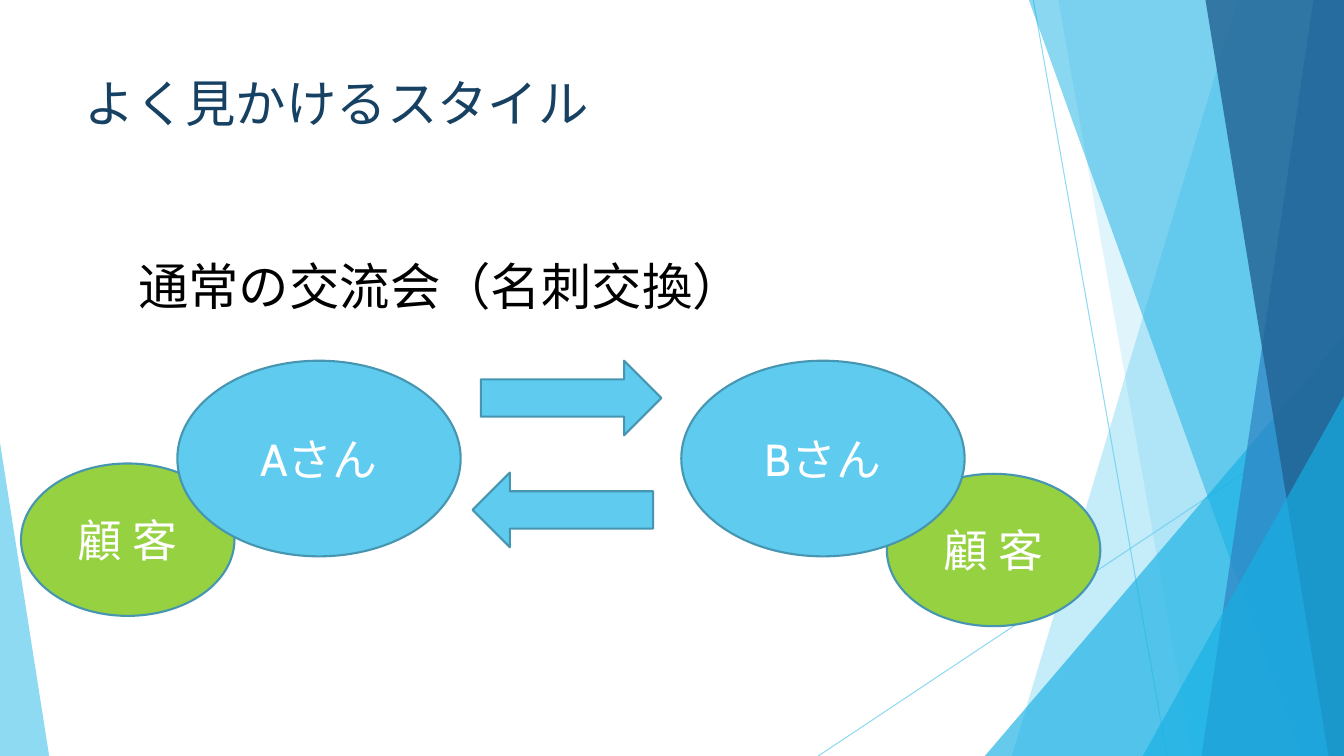
from collections import namedtuple
from dataclasses import dataclass

from lxml.etree import SubElement
from pptx import Presentation
from pptx.dml.color import RGBColor
from pptx.enum.shapes import MSO_CONNECTOR, MSO_SHAPE
from pptx.enum.text import MSO_ANCHOR, MSO_AUTO_SIZE, PP_ALIGN
from pptx.oxml.ns import qn
from pptx.util import Cm, Pt

Box = namedtuple("Box", "left top width height")


@dataclass(frozen=True)
class Theme:
    font: str = "Cabin"
    heading_size: int = 36
    label_size: int = 32
    title: str = "174162"
    text: str = "000000"
    white: str = "FFFFFF"
    sky: str = "5FCBEF"
    cyan: str = "17B0E4"
    blue: str = "2E83C3"
    navy: str = "226292"
    green: str = "96D141"
    outline: str = "4696B1"


THEME = Theme()
PAGE = Box(0, 0, 33.87, 19.05)


def lengths(box):
    return [Cm(value) for value in box]


def inside(box, left, top, width, height):
    return Box(box.left + left, box.top + top, width, height)


def paint(format_, color, opacity=100):
    """Give a fill or line format a solid colour with an opacity in percent."""
    fill = getattr(format_, "fill", format_)
    fill.solid()
    fill.fore_color.rgb = RGBColor.from_string(color)
    if opacity < 100:
        color_node = next(fill._xPr.iter(qn("a:srgbClr")))
        SubElement(color_node, qn("a:alpha")).set("val", str(opacity * 1000))


def write(shape, text, size, color, align=PP_ALIGN.LEFT):
    para = shape.text_frame.paragraphs[0]
    para.text = text
    para.alignment = align
    para.font.name = THEME.font
    para.font.size = Pt(size)
    para.font.color.rgb = RGBColor.from_string(color)


def add_hairline(page, start, end):
    line = page.shapes.add_connector(
        MSO_CONNECTOR.STRAIGHT, *lengths(start), *lengths(end))
    line.line.width = Pt(0.75)
    paint(line.line, THEME.sky, 70)
    SubElement(line._element.spPr, qn("a:effectLst"))


def add_band(page, box, top_x, bottom_x, color, opacity):
    """Fill from a slanted left edge to the right edge of the box."""
    right, bottom = box.left + box.width, box.top + box.height
    corners = [(right, box.top), (right, bottom), (box.left + bottom_x, bottom)]
    builder = page.shapes.build_freeform(Cm(box.left + top_x), Cm(box.top))
    builder.add_line_segments([lengths(corner) for corner in corners], close=True)
    band = builder.convert_to_shape()
    band.shadow.inherit = False
    paint(band.fill, color, opacity)
    band.line.fill.background()


def add_corner(page, box, width, height, apex, color, opacity):
    """Place a right triangle in a bottom corner: apex 0 is left, 1 is right."""
    place = inside(box, apex * (box.width - width), box.height - height, width, height)
    corner = page.shapes.add_shape(MSO_SHAPE.ISOSCELES_TRIANGLE, *lengths(place))
    corner.adjustments[0] = apex
    corner.shadow.inherit = False
    paint(corner.fill, color, opacity)
    corner.line.fill.background()


def add_backdrop(page, box):
    add_hairline(page, (box.left + 26.04, box.top), (box.left + 29.41, box.top + box.height))
    add_hairline(page, (box.left + box.width, box.top + 10.24),
                 (box.left + 20.62, box.top + box.height))
    add_band(page, box, 31.19, 25.5, THEME.sky, 36)
    add_band(page, box, 26.67, 30.05, THEME.sky, 20)
    add_corner(page, box, 9.05, 10.59, 1, THEME.cyan, 66)
    add_band(page, box, 25.93, 32.79, THEME.cyan, 50)
    add_band(page, box, 33.1, 30.28, THEME.blue, 70)
    add_band(page, box, 30.38, 33.48, THEME.navy, 80)
    add_corner(page, box, 5.07, 9.07, 1, THEME.cyan, 66)
    add_corner(page, box, 1.24, 7.9, 0, THEME.sky, 70)


def add_title(page, box, text):
    title = page.shapes.title
    title.left, title.top, title.width, title.height = lengths(box)
    title.text_frame.auto_size = MSO_AUTO_SIZE.NONE
    title.text_frame.vertical_anchor = MSO_ANCHOR.TOP
    write(title, text, THEME.heading_size, THEME.title)


def add_caption(page, box, text):
    caption = page.shapes.add_textbox(*lengths(box))
    caption.text_frame.word_wrap = False
    caption.text_frame.auto_size = MSO_AUTO_SIZE.SHAPE_TO_FIT_TEXT
    write(caption, text, THEME.heading_size, THEME.text)


def add_outlined(page, kind, box, color, text=""):
    shape = page.shapes.add_shape(kind, *lengths(box))
    shape.shadow.inherit = False
    paint(shape.fill, color)
    paint(shape.line, THEME.outline)
    shape.line.width = Pt(1.5)
    if text:
        shape.text_frame.vertical_anchor = MSO_ANCHOR.MIDDLE
        write(shape, text, THEME.label_size, THEME.white, PP_ALIGN.CENTER)


def add_exchange(page, box):
    """Two people swap cards, each with a customer behind them."""
    for left, top in ((0, 2.59), (21.82, 2.85)):
        add_outlined(page, MSO_SHAPE.OVAL, inside(box, left, top, 5.38, 3.84),
                     THEME.green, "顧 客")
    for left, name in ((3.94, "Aさん"), (16.64, "Bさん")):
        add_outlined(page, MSO_SHAPE.OVAL, inside(box, left, 0, 7.14, 4.93),
                     THEME.sky, name)
    for kind, left, top in ((MSO_SHAPE.RIGHT_ARROW, 11.59, 0),
                            (MSO_SHAPE.LEFT_ARROW, 11.38, 2.82)):
        add_outlined(page, kind, inside(box, left, top, 4.55, 1.88), THEME.sky)


def main():
    deck = Presentation()
    deck.slide_width, deck.slide_height = Cm(PAGE.width), Cm(PAGE.height)
    page = deck.slides.add_slide(deck.slide_layouts.get_by_name("Title Only"))
    add_backdrop(page, PAGE)
    add_title(page, Box(1.88, 1.7, 23.88, 3.66), "よく見かけるスタイル")
    add_caption(page, Box(3.23, 6.3, 15.9, 1.8), "通常の交流会（名刺交換）")
    add_exchange(page, Box(0.53, 9.09, 27.2, 6.69))
    deck.save("out.pptx")


if __name__ == "__main__":
    main()
